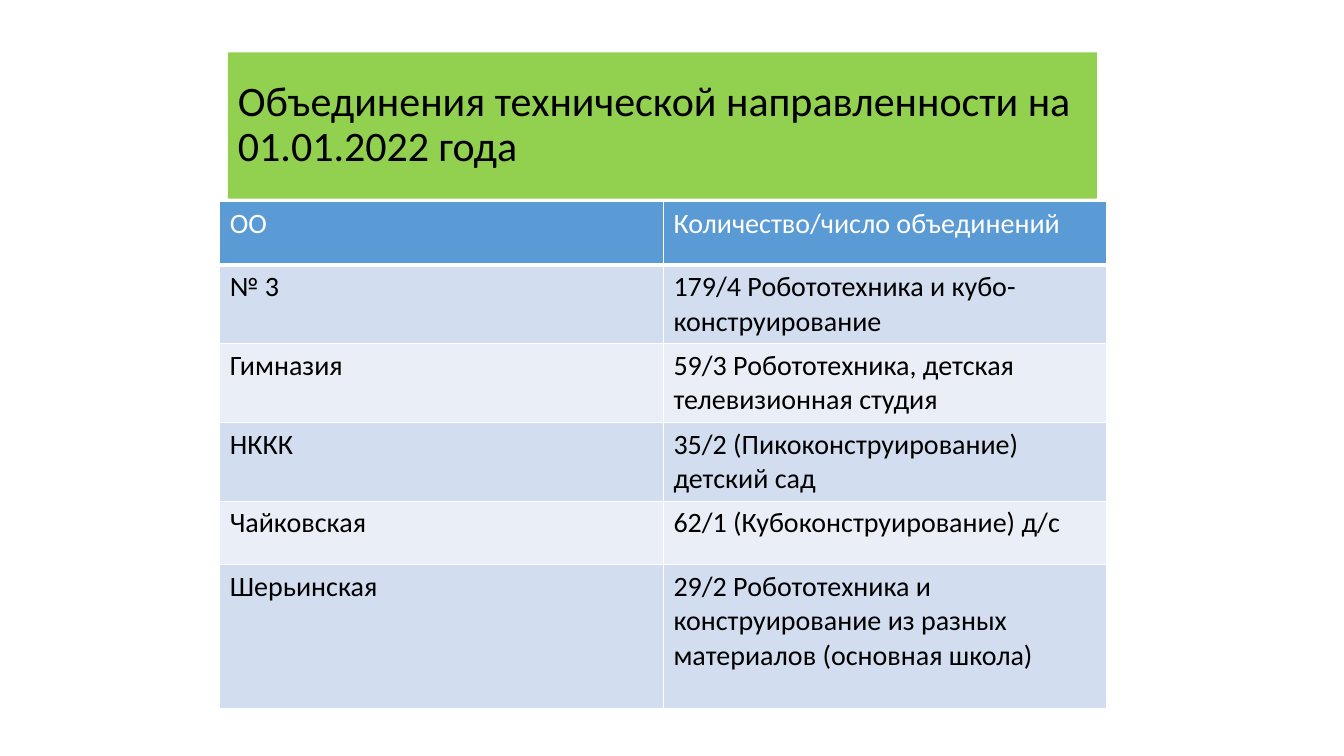
import pptx
import pptx.dml.color
import pptx.enum.text
import pptx.oxml
import pptx.oxml.ns
import pptx.util

Inches = pptx.util.Inches
Pt = pptx.util.Pt
RGBColor = pptx.dml.color.RGBColor

BLACK = RGBColor(0x00, 0x00, 0x00)
WHITE = RGBColor(0xFF, 0xFF, 0xFF)
GREEN = RGBColor(0x92, 0xD0, 0x50)
HEADER_BLUE = RGBColor(0x5B, 0x9B, 0xD5)
BAND_COLOURS = (RGBColor(0xEA, 0xEF, 0xF7), RGBColor(0xD2, 0xDE, 0xEF))

TITLE = "Объединения технической направленности на 01.01.2022 года"
ASSOCIATIONS = [
    ("ОО", "Количество/число объединений"),
    ("№ 3", "179/4 Робототехника и кубо-конструирование"),
    ("Гимназия", "59/3 Робототехника, детская телевизионная студия"),
    ("НККК", "35/2 (Пикоконструирование) детский сад"),
    ("Чайковская", "62/1 (Кубоконструирование) д/с"),
    ("Шерьинская", "29/2 Робототехника и конструирование из разных материалов (основная школа)"),
]
ROW_HEIGHTS = (0.63, 0.77, 0.77, 0.77, 0.63, 1.43)


class SlideBuilder:
    def __init__(self, slide, font_name):
        self.slide = slide
        self.font_name = font_name

    def add_text(self, frame, text, size, colour):
        para = frame.paragraphs[0]
        para.alignment = pptx.enum.text.PP_ALIGN.LEFT
        span = para.add_run()
        span.text = text
        font_format = {"name": self.font_name, "size": Pt(size), "bold": False}
        for name, value in font_format.items():
            setattr(span.font, name, value)
        span.font.color.rgb = colour
        return para

    def title(self, text, left, top, width, height):
        box = self.slide.shapes.title
        place = {"left": left, "top": top, "width": width, "height": height}
        for name, value in place.items():
            setattr(box, name, Inches(value))
        box.fill.solid()
        box.fill.fore_color.rgb = GREEN
        frame_format = {
            "word_wrap": True,
            "auto_size": pptx.enum.text.MSO_AUTO_SIZE.NONE,
            "vertical_anchor": pptx.enum.text.MSO_ANCHOR.MIDDLE,
        }
        for name, value in frame_format.items():
            setattr(box.text_frame, name, value)
        self.add_text(box.text_frame, text, 30, BLACK).line_spacing = 0.9

    def table(self, rows, row_heights, left, top, width):
        table = self.slide.shapes.add_table(
            len(rows), len(rows[0]), Inches(left), Inches(top),
            Inches(width), Inches(sum(row_heights)),
        ).table
        for row_index, (texts, height) in enumerate(zip(rows, row_heights)):
            table.rows[row_index].height = Inches(height)
            is_header = row_index == 0
            for column_index, text in enumerate(texts):
                cell = table.cell(row_index, column_index)
                cell.fill.solid()
                cell.fill.fore_color.rgb = HEADER_BLUE if is_header else BAND_COLOURS[row_index % 2]
                self.add_text(cell.text_frame, text, 20, WHITE if is_header else BLACK)
                self.borders(cell, top=3 if row_index == 1 else 1, bottom=3 if is_header else 1)

    def borders(self, cell, top, bottom):
        properties = cell._tc.get_or_add_tcPr()
        widths = {"lnL": 1, "lnR": 1, "lnT": top, "lnB": bottom}
        for position, (side, width) in enumerate(widths.items()):
            properties.insert(position, pptx.oxml.parse_xml(
                f'<a:{side} {pptx.oxml.ns.nsdecls("a")} w="{Pt(width)}">'
                f'<a:solidFill><a:srgbClr val="{WHITE}"/></a:solidFill></a:{side}>'
            ))


def main():
    deck = pptx.Presentation()
    deck.slide_width = Inches(13.33)
    deck.slide_height = Inches(7.5)
    title_only = deck.slide_layouts[5]
    page = SlideBuilder(deck.slides.add_slide(title_only), "Calibri")
    page.title(TITLE, 2.26, 0.52, 8.62, 1.45)
    page.table(ASSOCIATIONS, ROW_HEIGHTS, 2.18, 2, 8.8)
    deck.save("out.pptx")


if __name__ == "__main__":
    main()
